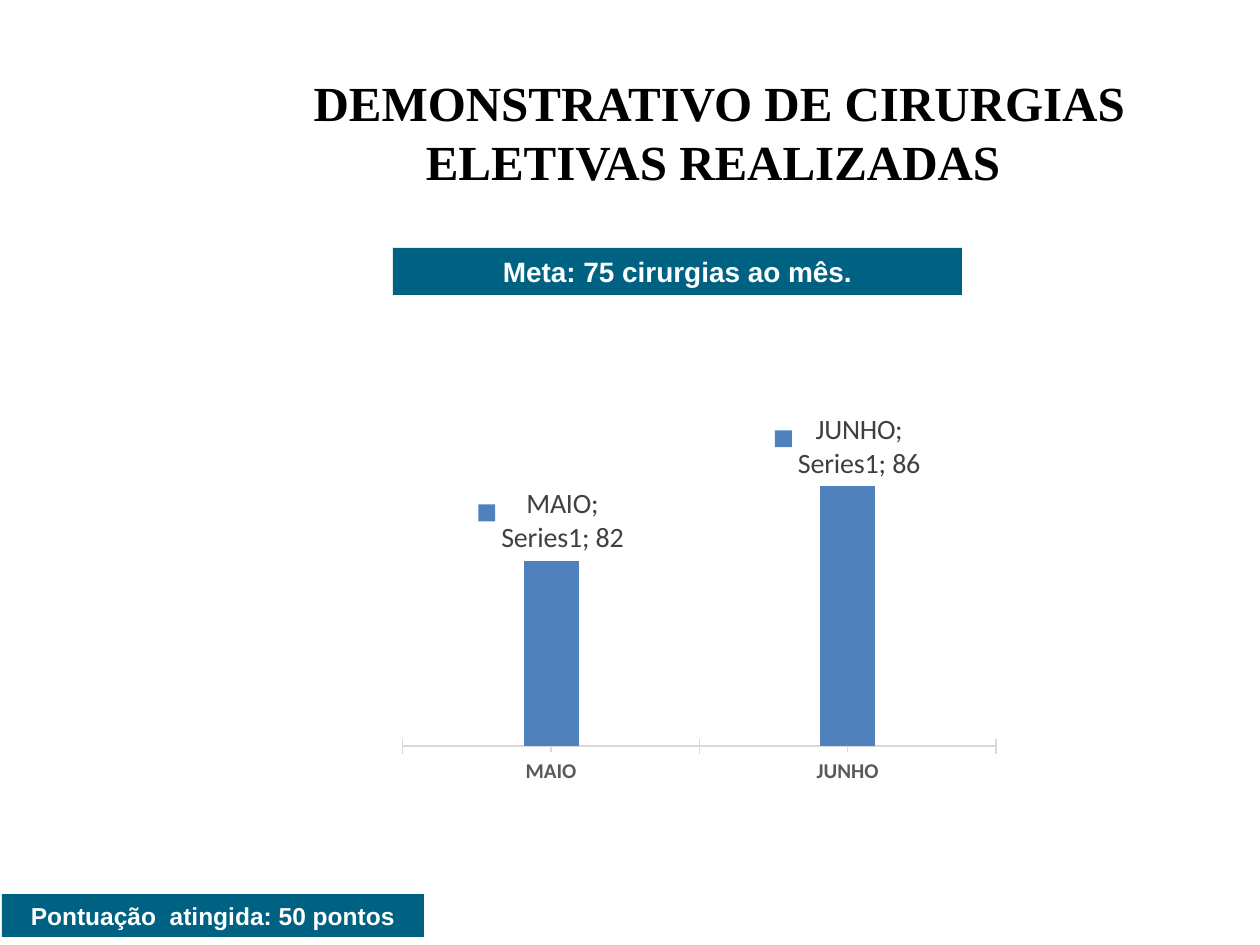
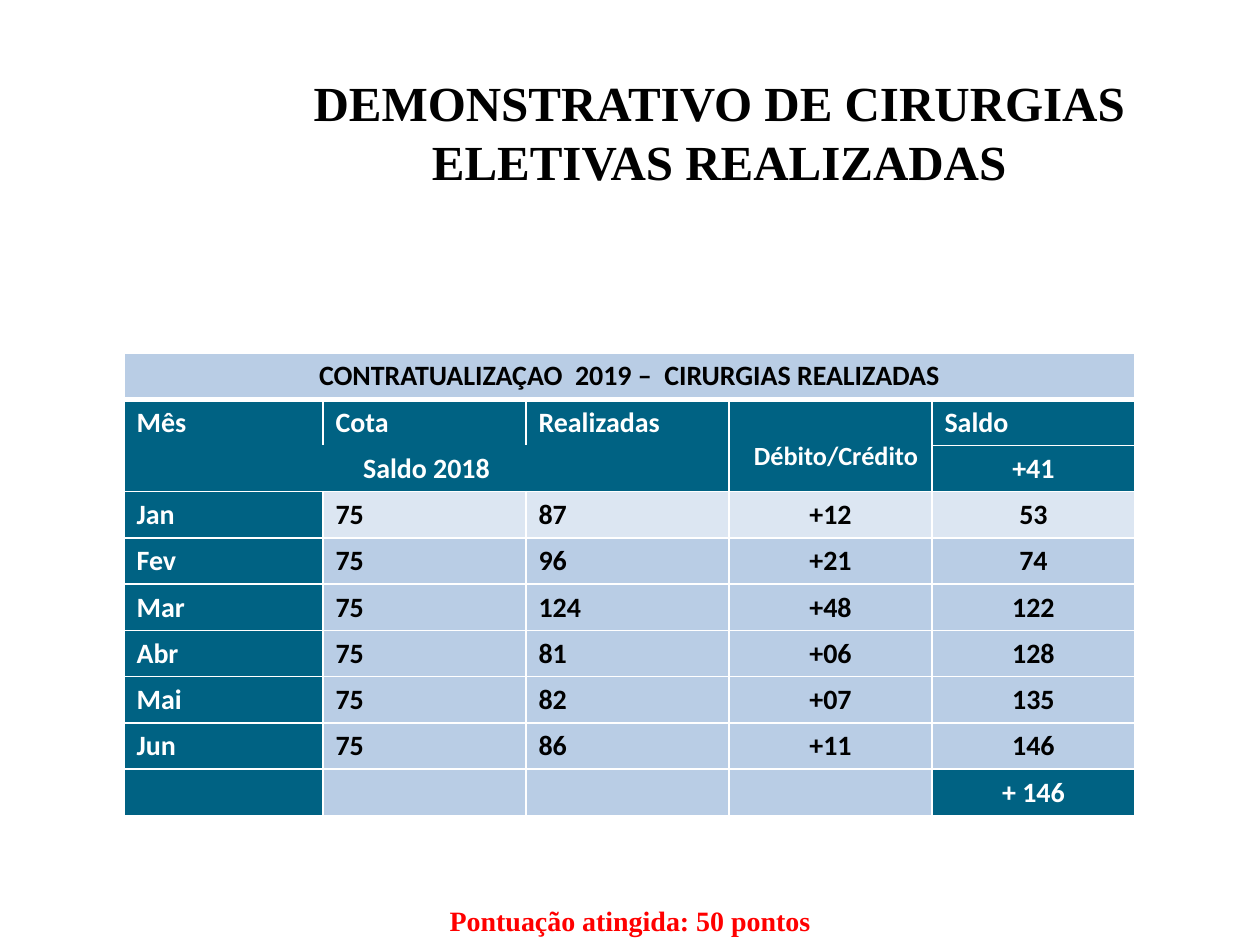
from lxml import etree
from pptx import Presentation
from pptx.chart.data import CategoryChartData
from pptx.dml.color import RGBColor
from pptx.enum.chart import XL_CHART_TYPE as ChartType, XL_LABEL_POSITION as LabelPosition
from pptx.enum.chart import XL_TICK_LABEL_POSITION as TickLabels, XL_TICK_MARK as TickMark
from pptx.enum.shapes import MSO_SHAPE as Shape
from pptx.enum.text import MSO_ANCHOR as Anchor, PP_ALIGN as Align
from pptx.oxml import parse_xml
from pptx.oxml.ns import nsdecls, qn
from pptx.util import Pt

SCALE = 914400 / 126
TEAL = RGBColor(0x00, 0x62, 0x83)
BLUE = RGBColor(0x4F, 0x81, 0xBD)
MID_BLUE = RGBColor(0xB9, 0xCD, 0xE5)
PALE_BLUE = RGBColor(0xDC, 0xE6, 0xF2)
WHITE = RGBColor(0xFF, 0xFF, 0xFF)
BLACK = RGBColor(0, 0, 0)
RED = RGBColor(0xFF, 0, 0)
LABEL_GRAY = RGBColor(0x40, 0x40, 0x40)
AXIS_GRAY = RGBColor(0x59, 0x59, 0x59)
LINE_GRAY = RGBColor(0xD9, 0xD9, 0xD9)
TITLE = "DEMONSTRATIVO DE CIRURGIAS ELETIVAS REALIZADAS"


def px(*lengths):
    return [round(length * SCALE) for length in lengths]


def add_label(page, place, text, font_name, size, color, fill=None):
    if fill is None:
        box = page.shapes.add_textbox(*px(*place))
    else:
        box = page.shapes.add_shape(Shape.RECTANGLE, *px(*place))
        box.shadow.inherit = False
        box.fill.solid()
        box.fill.fore_color.rgb = fill
        box.line.fill.background()
        box.text_frame.vertical_anchor = Anchor.MIDDLE
    box.text_frame.word_wrap = True
    box.text_frame.text = text
    para = box.text_frame.paragraphs[0]
    para.alignment = Align.CENTER
    font = para.runs[0].font
    font.name, font.size, font.bold = font_name, Pt(size), True
    font.color.rgb = color


deck = Presentation()
deck.slide_width, deck.slide_height = px(1260, 945)
chart_page, table_page = [deck.slides.add_slide(deck.slide_layouts[6]) for _ in range(2)]

for page, title in ((chart_page, TITLE + " "), (table_page, TITLE)):
    add_label(page, (213, 66, 1012, 131), title, "Times New Roman", 28, BLACK)

add_label(chart_page, (393, 248, 569, 47), "Meta: 75 cirurgias ao mês.", "Arial", 16, WHITE, TEAL)
add_label(chart_page, (2, 894, 422, 43), "Pontuação  atingida: 50 pontos", "Arial", 14, WHITE, TEAL)
add_label(table_page, (419, 897, 422, 47), "Pontuação atingida: 50 pontos",
          "Times New Roman", 16, RED, WHITE)

chart_data = CategoryChartData()
chart_data.categories = ["MAIO", "JUNHO"]
chart_data.add_series("Series1", (82, 86))
chart = chart_page.shapes.add_chart(
    ChartType.COLUMN_CLUSTERED, *px(243, 336, 815, 460), chart_data).chart
chart.has_title = False
chart.has_legend = False
chart.font.name, chart.font.size = "Calibri", Pt(10)
chart.font.color.rgb = BLACK

plot = chart.plots[0]
plot.gap_width, plot.overlap, plot.vary_by_categories = 439, 53, False
bars = plot.series[0]
bars.format.fill.solid()
bars.format.fill.fore_color.rgb = BLUE
plot.has_data_labels = True
labels = plot.data_labels
labels.show_legend_key = labels.show_category_name = True
labels.show_series_name = labels.show_value = True
labels.position = LabelPosition.OUTSIDE_END
labels.font.name, labels.font.size = "Calibri", Pt(16)
labels.font.color.rgb = LABEL_GRAY
separator = etree.Element(qn("c:separator"))
separator.text = "; "
labels._element.find(qn("c:showBubbleSize")).addnext(separator)

month_axis = chart.category_axis
month_axis.major_tick_mark = TickMark.CROSS
month_axis.minor_tick_mark = TickMark.OUTSIDE
month_axis.tick_label_position = TickLabels.LOW
month_axis.format.line.color.rgb = LINE_GRAY
month_font = month_axis.tick_labels.font
month_font.name, month_font.size, month_font.bold = "Calibri", Pt(12), True
month_font.color.rgb = AXIS_GRAY
value_axis = chart.value_axis
value_axis.minimum_scale, value_axis.maximum_scale, value_axis.major_unit = 72, 90, 9
value_axis.has_major_gridlines = False
value_axis.visible = False

plot_area = chart._chartSpace.find(".//" + qn("c:plotArea"))
for layout in plot_area.findall(qn("c:layout")):
    plot_area.remove(layout)
plot_area.insert(0, parse_xml(
    f'<c:layout {nsdecls("c")}><c:manualLayout><c:layoutTarget val="inner"/>'
    '<c:xMode val="edge"/><c:yMode val="edge"/><c:x val="0.196"/><c:y val="0.166"/>'
    '<c:w val="0.728"/><c:h val="0.726"/></c:manualLayout></c:layout>'))

rows = [
    ("CONTRATUALIZAÇAO  2019 –  CIRURGIAS REALIZADAS", "", "", "", ""),
    ("Mês", "Cota", "Realizadas", "Débito/Crédito", "Saldo"),
    ("Saldo 2018", "", "", "", ""),
    ("", "", "", "", "+41"),
    ("Jan", "75", "87", "+12", "53"),
    ("Fev", "75", "96", "+21", "74"),
    ("Mar", "75", "124", "+48", "122"),
    ("Abr", "75", "81", "+06", "128"),
    ("Mai", "75", "82", "+07", "135"),
    ("Jun", "75", "86", "+11", "146"),
    ("", "", "", "", "+ 146"),
]
last_row = len(rows) - 1
table = table_page.shapes.add_table(len(rows), 5, *px(124, 353, 1011, 460)).table
for column, width in zip(table.columns, px(199, 203, 203, 203, 203)):
    column.width = width
for r, row in enumerate(table.rows):
    row.height = px(0 if r == 2 else 46)[0]

for r, values in enumerate(rows):
    for c, value in enumerate(values):
        cell = table.cell(r, c)
        is_teal = r in (1, 2, 3) or (r > 3 and c == 0) or (r == last_row and c == 4)
        cell.fill.solid()
        cell.fill.fore_color.rgb = TEAL if is_teal else PALE_BLUE if r == 4 else MID_BLUE
        cell.text_frame.text = value
        para = cell.text_frame.paragraphs[0]
        if r in (0, 2, 3) or (r > 3 and c > 2):
            para.alignment = Align.CENTER
        para.font.size = Pt(16)
        for span in para.runs:
            span.font.name, span.font.size, span.font.bold = "Calibri", Pt(16), True
            span.font.color.rgb = WHITE if is_teal else BLACK
        properties = cell._tc.get_or_add_tcPr()
        for position, side in enumerate("LRTB"):
            joined = c < 4 and (r, side) in ((1, "B"), (2, "T"), (2, "B"), (3, "T"))
            thick = (r, side) in ((0, "B"), (1, "T"))
            paint = "<a:noFill/>" if joined else (
                f'<a:solidFill><a:srgbClr val="{WHITE}"/></a:solidFill>')
            properties.insert(position, parse_xml(
                f'<a:ln{side} {nsdecls("a")} w="{Pt(3 if thick else 1)}">{paint}</a:ln{side}>'))

for top, left, bottom, right in ((0, 0, 0, 4), (1, 3, 3, 3), (1, 4, 2, 4), (2, 0, 3, 2)):
    table.cell(top, left).merge(table.cell(bottom, right))
balance_cell = table.cell(1, 3)
balance_cell.margin_left, balance_cell.margin_right, balance_cell.margin_top = px(25, 6, 41)
balance_cell.text_frame.paragraphs[0].runs[0].font.size = Pt(15)

deck.save("out.pptx")
